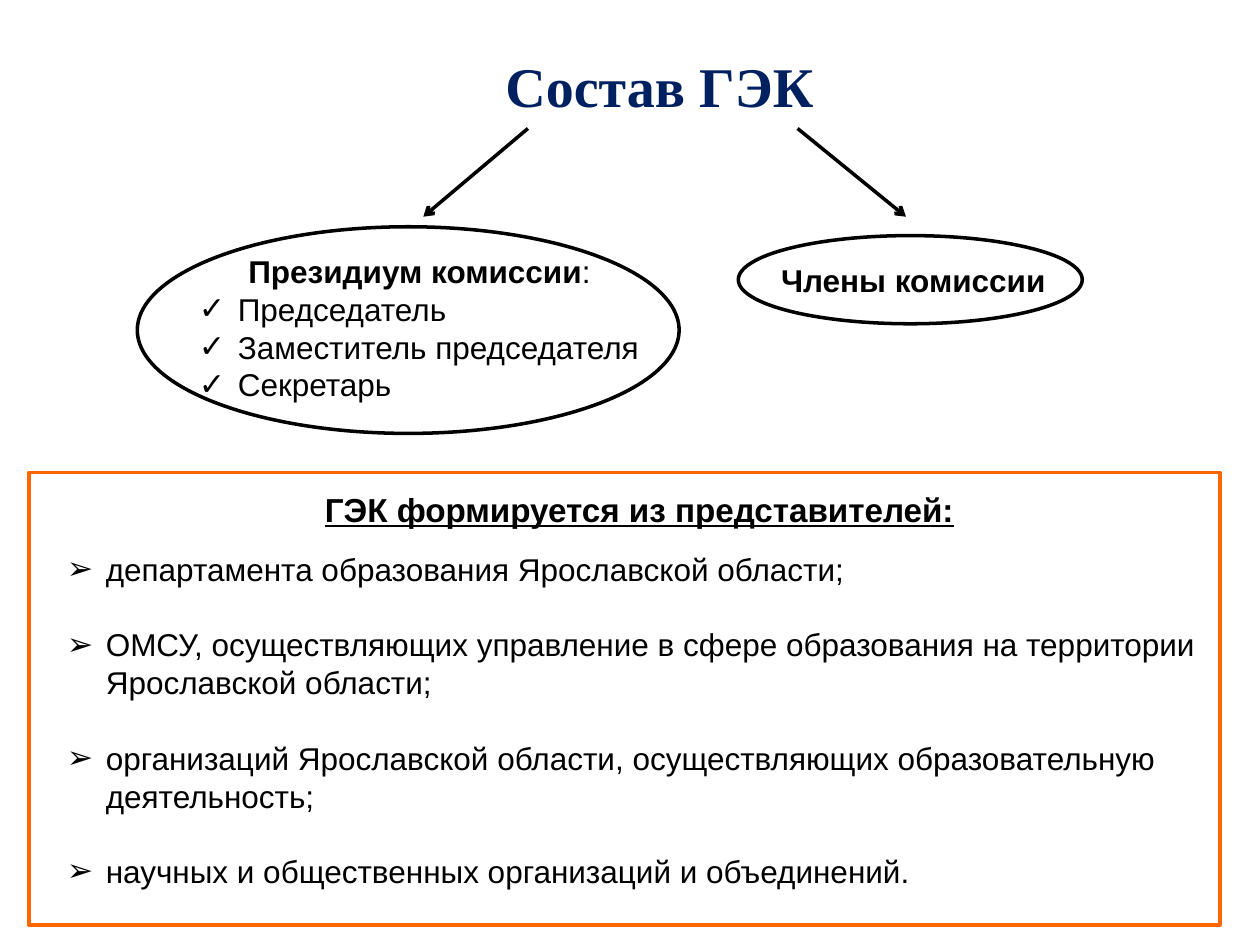
from pptx import Presentation, util as u
from pptx.dml.color import RGBColor
from pptx.enum import shapes, text
from pptx.oxml.ns import qn
from lxml import etree

COLORS = {"ink": "000000", "title": "002060", "frame": "FF6600"}


class SlideBuilder:
    """Holds the style and the current slide, and adds its elements."""

    font = "Arial"
    size = 18
    indent = u.Inches(0.31)

    def __init__(self, page):
        self.page = page

    def place(self, box, left, top, width, height):
        box.left, box.top = u.Inches(left), u.Inches(top)
        box.width, box.height = u.Inches(width), u.Inches(height)
        frame = box.text_frame
        frame.word_wrap = True
        frame.auto_size = text.MSO_AUTO_SIZE.NONE
        frame.vertical_anchor = text.MSO_ANCHOR.TOP
        return frame

    def textbox(self, *area):
        box = self.page.shapes.add_textbox(*map(u.Inches, area))
        return self.place(box, *area)

    def style(self, span, size=None, bold=False, underline=False, font=None, color="ink"):
        span.font.name = font or self.font
        span.font.size = u.Pt(size or self.size)
        span.font.bold = bold
        span.font.underline = underline
        span.font.color.rgb = RGBColor.from_string(COLORS[color])

    def heading(self, frame, words, centered=True, after=0, **look):
        para = frame.paragraphs[0]
        para.text = words
        properties = para._p.get_or_add_pPr()
        properties.set("marL", "0")
        properties.set("indent", "0")
        etree.SubElement(properties, qn("a:buNone"))
        para.alignment = text.PP_ALIGN.CENTER if centered else text.PP_ALIGN.LEFT
        para.space_before, para.space_after = u.Pt(0), u.Pt(after)
        self.style(para.runs[0], bold=True, **look)
        return para

    def bullets(self, frame, items, mark, gap=0):
        for number, item in enumerate(items, 1):
            para = frame.add_paragraph()
            para.text = item
            properties = para._p.get_or_add_pPr()
            properties.set("marL", str(self.indent))
            properties.set("indent", str(-self.indent))
            etree.SubElement(properties, qn("a:buFont"), typeface=self.font)
            etree.SubElement(properties, qn("a:buChar"), char=mark)
            para.alignment = text.PP_ALIGN.LEFT
            para.space_before = u.Pt(0)
            para.space_after = u.Pt(gap if number < len(items) else 0)
            self.style(para.runs[0])

    def outline(self, kind, area, color="ink", weight=2):
        shape = self.page.shapes.add_shape(kind, *map(u.Inches, area))
        shape.shadow.inherit = False
        shape.fill.background()
        shape.line.color.rgb = RGBColor.from_string(COLORS[color])
        shape.line.width = u.Pt(weight)

    def arrow(self, start, end):
        line = self.page.shapes.add_connector(
            shapes.MSO_CONNECTOR.STRAIGHT, *map(u.Inches, start + end))
        line.line.color.rgb = RGBColor.from_string(COLORS["ink"])
        line.line.width = u.Pt(2)
        etree.SubElement(line.line._get_or_add_ln(), qn("a:tailEnd"), type="arrow")
        etree.SubElement(line._element.spPr, qn("a:effectLst"))


def main():
    deck = Presentation()
    deck.slide_width, deck.slide_height = u.Inches(10), u.Inches(7.5)
    page = deck.slides.add_slide(deck.slide_layouts[1])
    builder = SlideBuilder(page)

    title = builder.place(page.shapes.title, 1.82, 0.36, 6.83, 0.64)
    builder.heading(title, "Состав ГЭК", size=32, font="Times New Roman", color="title")

    presidium = builder.textbox(1.48, 1.95, 3.7, 1.31)
    para = builder.heading(presidium, "Президиум комиссии")
    colon = para.add_run()
    colon.text = ":"
    builder.style(colon)
    builder.bullets(presidium, ["Председатель", "Заместитель председателя", "Секретарь"], "✓")

    members = builder.textbox(6.1, 2.02, 2.52, 0.4)
    builder.heading(members, "Члены комиссии", centered=False)

    for start, end in (((6.33, 1.02), (7.19, 1.72)), ((4.19, 1.02), (3.36, 1.72))):
        builder.arrow(start, end)

    sources = builder.place(page.placeholders[1], 0.43, 3.83, 9.29, 3.33)
    builder.heading(sources, "ГЭК формируется из представителей:", after=12, size=19, underline=True)
    builder.bullets(sources, [
        "департамента образования Ярославской области;",
        "ОМСУ, осуществляющих управление в сфере образования на территории Ярославской области;",
        "организаций Ярославской области, осуществляющих образовательную деятельность;",
        "научных и общественных организаций и объединений.",
    ], "➢", gap=21.6)

    builder.outline(shapes.MSO_SHAPE.RECTANGLE, (0.23, 3.75, 9.45, 3.59), "frame", 2.25)
    for area in ((5.86, 1.87, 2.73, 0.7), (1.09, 1.8, 4.3, 1.64)):
        builder.outline(shapes.MSO_SHAPE.OVAL, area)

    deck.save("out.pptx")


if __name__ == "__main__":
    main()
